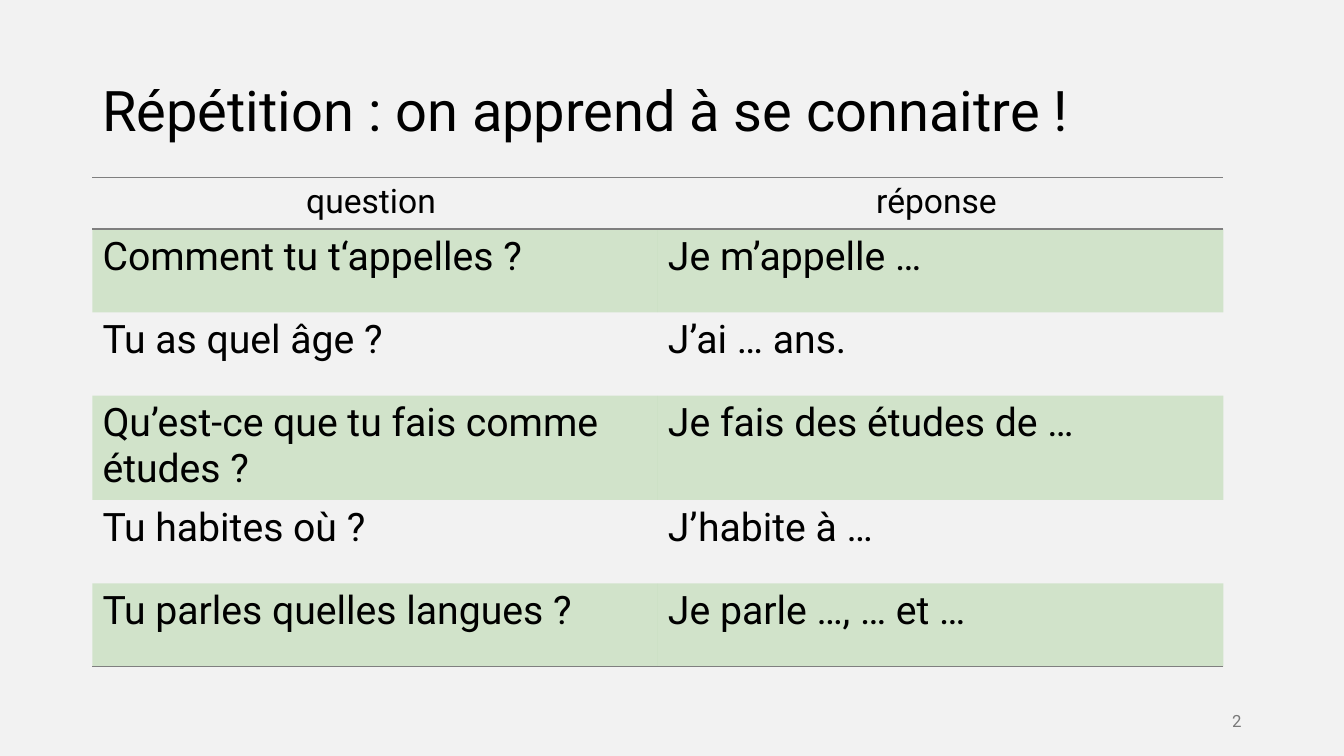
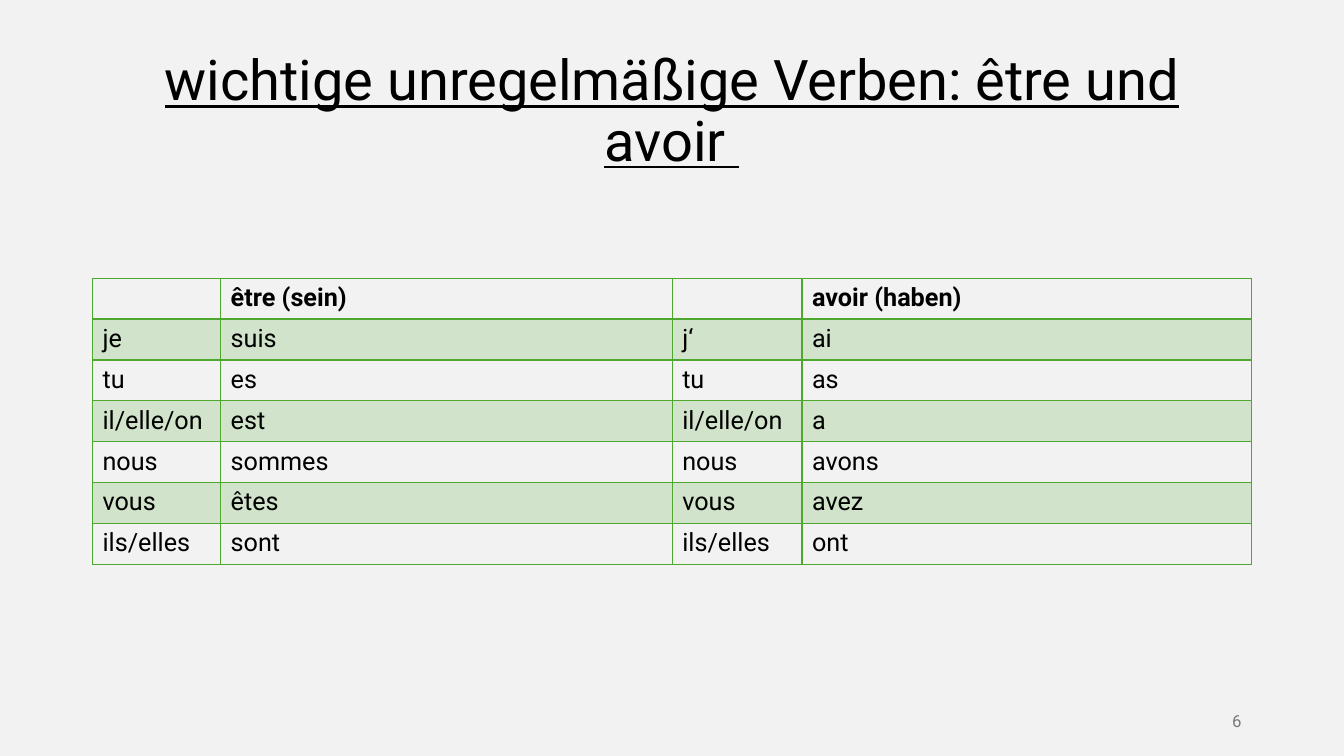
from lxml.etree import SubElement
from pptx import Presentation
from pptx.dml.color import RGBColor
from pptx.enum.text import MSO_ANCHOR, PP_ALIGN
from pptx.oxml.ns import qn
from pptx.util import Cm, Pt

FONT = "Roboto"
HUES = {"back": "F2F2F2", "text": "000000", "green": "4EA72E",
        "rule": "7F7F7F", "page": "797979"}
PLAIN = "{2D5ABB26-0587-4C30-8999-92F81FD0307C}"  # no style, no grid
LEFT, WIDE = 2.33, 29.21


def hue(name):
    return RGBColor.from_string(HUES[name])


class Deck:
    def __init__(self):
        self.prs = Presentation()
        self.prs.slide_width = Cm(33.87)
        self.prs.slide_height = Cm(19.05)
        self.slide = None

    def page(self, num):
        self.slide = self.prs.slides.add_slide(self.prs.slide_layouts[6])
        fill = self.slide.background.fill
        fill.solid()
        fill.fore_color.rgb = hue("back")
        self.text(str(num), (23.92, 17.66, 7.62, 1.01), 12, "page", PP_ALIGN.RIGHT)

    def style(self, para, size, color="text", align=PP_ALIGN.LEFT, bold=False):
        para.alignment = align
        font = para.font
        font.name, font.size, font.bold = FONT, Pt(size), bold
        font.color.rgb = hue(color)

    def text(self, words, box, size, color, align):
        frame = self.slide.shapes.add_textbox(*map(Cm, box)).text_frame
        frame.word_wrap = True
        frame.vertical_anchor = MSO_ANCHOR.MIDDLE
        para = frame.paragraphs[0]
        para.text = words
        self.style(para, size, color, align)
        return para

    def title(self, words, align=PP_ALIGN.LEFT, under=False):
        para = self.text(words, (LEFT, 1.01, WIDE, 3.68), 40, "text", align)
        para.line_spacing = 0.9
        para.font.underline = under

    def tint(self, cell):
        """Fill a cell with green at 20 % strength."""
        cell.fill.solid()
        cell.fill.fore_color.rgb = hue("green")
        shade = cell.fill._xPr.find(qn("a:solidFill"))[0]
        SubElement(shade, qn("a:alpha"), val="20000")

    def edge(self, cell, sides, color):
        """Draw 1 pt borders; sides are given in the order L, R, T, B."""
        props = cell._tc.get_or_add_tcPr()
        for i, side in enumerate(sides):
            line = SubElement(props, qn("a:ln" + side), w=str(Pt(1)))
            fill = SubElement(line, qn("a:solidFill"))
            SubElement(fill, qn("a:srgbClr"), val=HUES[color])
            props.insert(i, line)

    def table(self, rows, top, cols, highs, sizes, head, sides, color):
        """sizes: header and body; head: header style; sides: borders by row."""
        shape = self.slide.shapes.add_table(
            len(rows), len(cols), Cm(LEFT), Cm(top), Cm(sum(cols)), Cm(sum(highs)))
        grid = shape.table
        grid.first_row = grid.horz_banding = False
        grid._tbl.tblPr.find(qn("a:tableStyleId")).text = PLAIN
        for col, wide in zip(grid.columns, cols):
            col.width = Cm(wide)
        for r, row in enumerate(rows):
            grid.rows[r].height = Cm(highs[r])
            for c, words in enumerate(row):
                cell = grid.cell(r, c)
                para = cell.text_frame.paragraphs[0]
                para.text = words
                self.style(para, sizes[r > 0], **({} if r else head))
                if r % 2:
                    self.tint(cell)
                else:
                    cell.fill.background()
                self.edge(cell, sides[r], color)


def main():
    deck = Deck()

    # Questions and answers
    deck.page(2)
    deck.title("Répétition : on apprend à se connaitre !")
    talk = [
        ("question ", "réponse "),
        ("Comment tu t‘appelles ?", "Je m’appelle …"),
        ("Tu as quel âge ?", "J’ai … ans."),
        ("Qu’est-ce que tu fais comme études ?", "Je fais des études de …"),
        ("Tu habites où ?", "J’habite à …"),
        ("Tu parles quelles langues ?", "Je parle …, … et …"),
    ]
    deck.table(talk, 4.47, [14.25] * 2, [1.3] + [2.1] * 5, (24, 28),
               {"align": PP_ALIGN.CENTER}, ["TB", "", "", "", "", "B"], "rule")

    # Verb forms
    deck.page(6)
    deck.title("wichtige unregelmäßige Verben: être und avoir ",
               PP_ALIGN.CENTER, under=True)
    verbs = [
        ("", "être (sein)", "", "avoir (haben)"),
        ("je", "suis", "j‘", "ai"),
        ("tu", "es", "tu", "as"),
        ("il/elle/on", "est", "il/elle/on", "a"),
        ("nous", "sommes", "nous", "avons"),
        ("vous", "êtes", "vous", "avez"),
        ("ils/elles", "sont", "ils/elles", "ont"),
    ]
    deck.table(verbs, 7.01, [3.23, 11.38, 3.27, 11.33], [1.03] * 7, (18, 18),
               {"bold": True}, ["LRTB"] * 7, "green")

    deck.prs.save("out.pptx")


if __name__ == "__main__":
    main()
